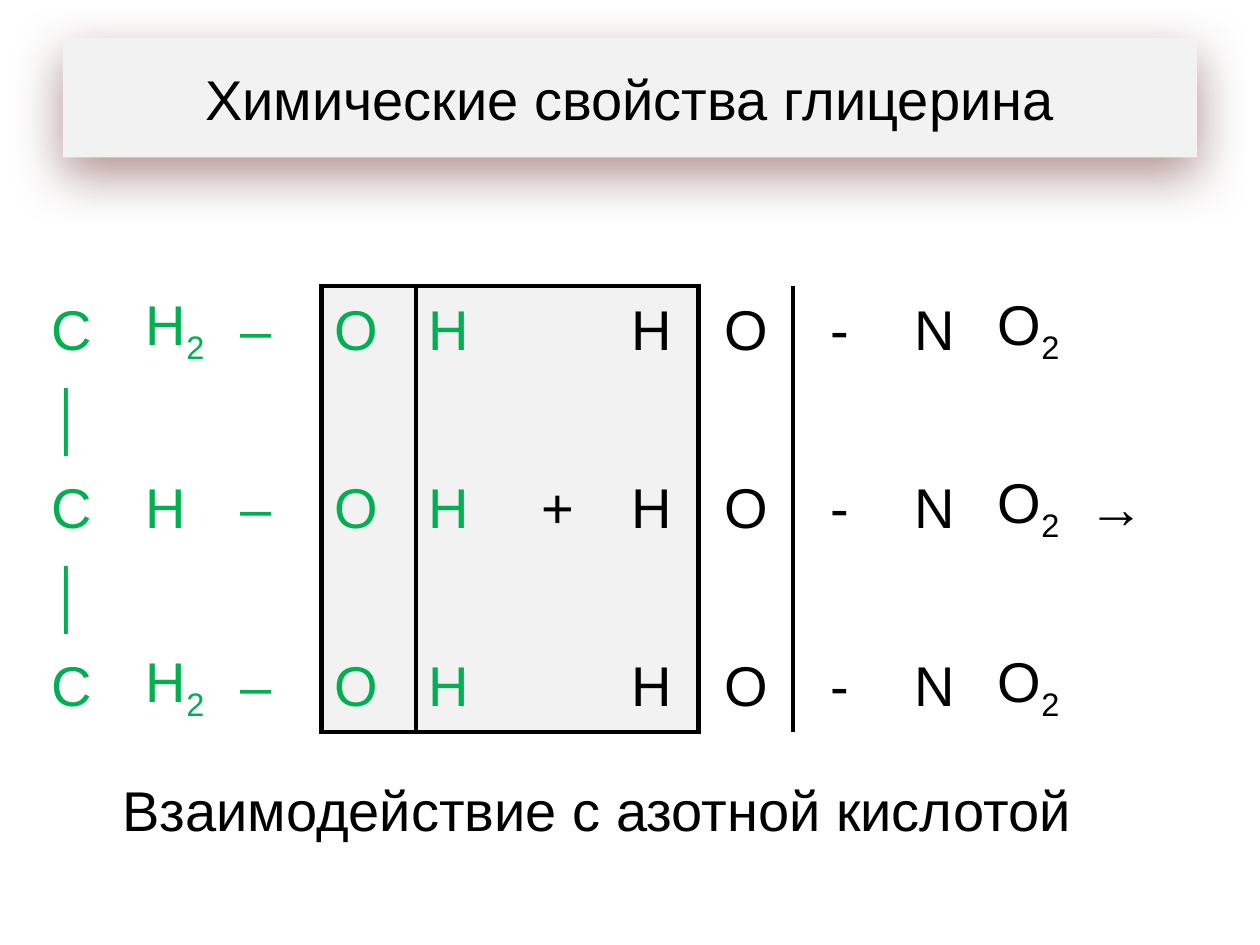
from lxml import etree
from pptx import Presentation
from pptx.dml.color import RGBColor
from pptx.enum.shapes import MSO_SHAPE
from pptx.enum.text import MSO_ANCHOR, PP_ALIGN
from pptx.oxml.ns import qn
from pptx.util import Inches, Pt

RECTANGLE = MSO_SHAPE.RECTANGLE
MIDDLE = MSO_ANCHOR.MIDDLE
LEFT, CENTER = PP_ALIGN.LEFT, PP_ALIGN.CENTER

# Content: a digit after a letter is a subscript
TITLE = "Химические свойства глицерина"
CAPTION = "Взаимодействие с азотной кислотой"
END_ROW = ["C", "H2", "–", "O", "H", "", "H", "O", "-", "N", "O2", ""]
BOND_ROW = ["│"] + [""] * 11
MIDDLE_ROW = ["C", "H", "–", "O", "H", "+", "H", "O", "-", "N", "O2", "→"]
REACTION = [END_ROW, BOND_ROW, MIDDLE_ROW, BOND_ROW, END_ROW]

GLYCEROL_COLUMNS = range(0, 5)   # green, left aligned
CENTERED_COLUMNS = range(5, 11)
FRAME_COLUMNS = range(3, 7)      # shaded atoms that react

THEME = {
    "font": "Arial",
    "size": Pt(32),
    "text": RGBColor(0x00, 0x00, 0x00),
    "glycerol": RGBColor(0x00, 0xB0, 0x50),
    "panel": RGBColor(0xF2, 0xF2, 0xF2),
    "border": "000000",
    "border_width": Pt(3),
    "shadow": "632523",
}
NO_TABLE_STYLE = "{2D5ABB26-0587-4C30-8999-92F81FD0307C}"


def write(frame, text, color, align):
    para = frame.paragraphs[0]
    para.alignment = align
    para.font.name = THEME["font"]
    para.font.size = THEME["size"]
    para.font.color.rgb = color
    parts = [text[:-1], text[-1]] if text[-1:].isdigit() else [text]
    for part in parts:
        if part:
            span = para.add_run()
            span.text = part
            if part.isdigit():
                span.font._element.set("baseline", "-25000")


def add_color(parent, color):
    fill = etree.SubElement(parent, qn("a:solidFill"))
    return etree.SubElement(fill, qn("a:srgbClr"), val=color)


def add_borders(cell, sides):
    properties = cell._tc.get_or_add_tcPr()
    for position, side in enumerate(s for s in "LRTB" if s in sides):
        line = etree.Element(qn("a:ln" + side), w=str(THEME["border_width"]))
        add_color(line, THEME["border"])
        properties.insert(position, line)


def add_plain_table(page, rows, columns, left, top, width, height):
    table = page.shapes.add_table(rows, columns, Inches(left), Inches(top),
                                  Inches(width), Inches(height)).table
    table.first_row = table.horz_banding = False
    table._tbl.tblPr.find(qn("a:tableStyleId")).text = NO_TABLE_STYLE
    for cell in table.iter_cells():
        cell.vertical_anchor = MIDDLE
        cell.fill.background()
    return table


def add_title(page):
    box = page.shapes.add_shape(RECTANGLE, Inches(0.5), Inches(0.3), Inches(9), Inches(0.95))
    box.fill.solid()
    box.fill.fore_color.rgb = THEME["panel"]
    box.line.fill.background()
    box.shadow.inherit = False
    effects = box._element.spPr.find(qn("a:effectLst"))
    shadow = etree.SubElement(effects, qn("a:outerShdw"), blurRad=str(Pt(30)),
                              dist=str(Pt(10)), dir="5400000", rotWithShape="0")
    shadow_color = etree.SubElement(shadow, qn("a:srgbClr"), val=THEME["shadow"])
    etree.SubElement(shadow_color, qn("a:alpha"), val="50000")
    box.text_frame.word_wrap = True
    box.text_frame.vertical_anchor = MIDDLE
    write(box.text_frame, TITLE, THEME["text"], CENTER)


def frame_sides(row, column):
    """Sides of a cell that lie on the outline of the shaded frame."""
    first, last = FRAME_COLUMNS[0], FRAME_COLUMNS[-1]
    sides = ""
    if column in (first, last + 1):
        sides += "L"
    if column in (first - 1, last):
        sides += "R"
    if column in FRAME_COLUMNS:
        sides += "T" if row == 0 else ""
        sides += "B" if row == len(REACTION) - 1 else ""
    return sides


def add_reaction(page):
    table = add_plain_table(page, len(REACTION), len(END_ROW), 0.31, 2.27, 8.98, 3.54)
    for row, symbols in enumerate(REACTION):
        for column, symbol in enumerate(symbols):
            cell = table.cell(row, column)
            if column in FRAME_COLUMNS:
                cell.fill.solid()
                cell.fill.fore_color.rgb = THEME["panel"]
            color = THEME["glycerol" if column in GLYCEROL_COLUMNS else "text"]
            write(cell.text_frame, symbol, color,
                  CENTER if column in CENTERED_COLUMNS else LEFT)
            add_borders(cell, frame_sides(row, column))


def add_caption(page):
    table = add_plain_table(page, 1, 1, 0.87, 6.09, 8.26, 0.71)
    write(table.cell(0, 0).text_frame, CAPTION, THEME["text"], LEFT)


def main():
    deck = Presentation()
    deck.slide_width, deck.slide_height = Inches(10), Inches(7.5)
    page = deck.slides.add_slide(deck.slide_layouts[6])
    add_title(page)
    add_reaction(page)
    add_caption(page)
    deck.save("out.pptx")


if __name__ == "__main__":
    main()
